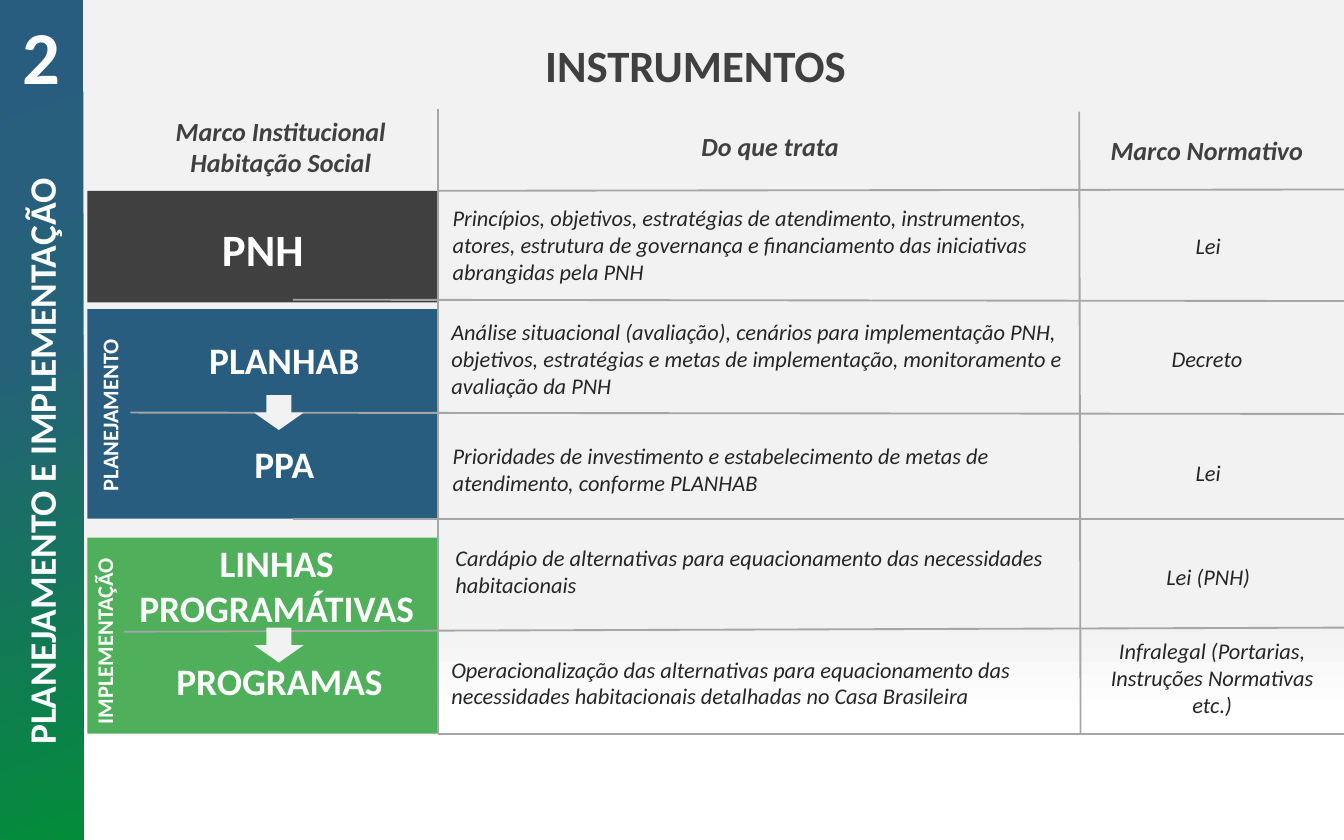
from dataclasses import dataclass

from lxml.etree import SubElement
from pptx import Presentation
from pptx.dml.color import RGBColor
from pptx.enum.shapes import MSO_CONNECTOR as Connector, MSO_SHAPE as Shape
from pptx.enum.text import MSO_ANCHOR as Anchor, MSO_AUTO_SIZE as AutoSize, PP_ALIGN as Align
from pptx.oxml.ns import qn
from pptx.util import Inches, Pt


@dataclass(frozen=True)
class Theme:
    """Colours, gradients and text formats of the slide."""
    font: str = "Calibri"
    white: str = "FFFFFF"
    pale: str = "F2F2F2"
    dark: str = "404040"
    ink: str = "262626"
    rule: str = "A6A6A6"
    blue: str = "285D7F"
    green: str = "4FAF5A"
    page: tuple = ((0, "F2F2F2"), (74, "F2F2F2"), (85, "FFFFFF"), (100, "FFFFFF"))
    band: tuple = ((0, "285D7F"), (42, "256179"), (100, "038C3A"))

    def text_style(self, role):
        """Return the font values and colour for a text role."""
        size, color, bold, italic = {
            "number": (40, self.white, True, False),
            "title": (24, self.dark, True, False),
            "policy": (24, self.white, True, False),
            "stage": (20, self.white, True, False),
            "phase": (12, self.white, True, False),
            "header": (14, self.dark, True, True),
            "detail": (12, self.ink, False, True),
        }[role]
        return {"name": self.font, "size": Pt(size), "bold": bold, "italic": italic}, color


class SlideBuilder:
    """Draws styled elements on the current slide."""

    def __init__(self, slide, theme):
        self.slide = slide
        self.theme = theme

    def gradient(self, fill, element, stops, angle):
        """Give a fill a linear gradient with any number of stops."""
        fill.gradient()
        fill.gradient_angle = 360 - angle
        stop_list = next(element.iter(qn("a:gsLst")))
        for old_stop in list(stop_list):
            stop_list.remove(old_stop)
        for position, color in stops:
            stop = SubElement(stop_list, qn("a:gs"), pos=str(position * 1000))
            SubElement(stop, qn("a:srgbClr"), val=color)

    def background(self):
        """Fill the slide background."""
        self.gradient(self.slide.background.fill, self.slide.element, self.theme.page, 90)

    def block(self, area, color, kind=Shape.RECTANGLE):
        """Add a borderless shape in one colour."""
        block = self.slide.shapes.add_shape(kind, *map(Inches, area))
        block.shadow.inherit = False
        block.line.fill.background()
        block.fill.solid()
        block.fill.fore_color.rgb = RGBColor.from_string(color)
        return block

    def side_band(self, area):
        """Add the gradient band behind everything else."""
        band = self.block(area, self.theme.blue)
        self.gradient(band.fill, band.element, self.theme.band, 70)
        band.element.getparent().insert(2, band.element)

    def rule(self, start, end):
        """Add a thin grey line."""
        rule = self.slide.shapes.add_connector(
            Connector.STRAIGHT, *map(Inches, (*start, *end)))
        rule.line.color.rgb = RGBColor.from_string(self.theme.rule)
        rule.line.width = Pt(1)
        SubElement(rule.element.spPr, qn("a:effectLst"))

    def add_text(self, frame, text, role, align):
        """Put formatted paragraphs into a text frame."""
        values, color = self.theme.text_style(role)
        frame.word_wrap = True
        for index, line in enumerate(text.split("\n")):
            paragraph = frame.add_paragraph() if index else frame.paragraphs[0]
            paragraph.alignment = align
            run = paragraph.add_run()
            run.text = line
            for name, value in values.items():
                setattr(run.font, name, value)
            run.font.color.rgb = RGBColor.from_string(color)

    def label(self, area, text, role, align=Align.CENTER, rotation=0):
        """Add a text box."""
        label = self.slide.shapes.add_textbox(*map(Inches, area))
        label.rotation = rotation
        self.add_text(label.text_frame, text, role, align)
        label.text_frame.auto_size = AutoSize.SHAPE_TO_FIT_TEXT

    def placeholder(self, index, area, text, role, rotation=0):
        """Move and fill a template placeholder."""
        holder = self.slide.placeholders[index]
        for name, value in zip(("left", "top", "width", "height"), area):
            setattr(holder, name, Inches(value))
        holder.rotation = rotation
        frame = holder.text_frame
        frame.auto_size = AutoSize.NONE
        frame.vertical_anchor = Anchor.MIDDLE
        properties = frame.paragraphs[0]._p.get_or_add_pPr()
        properties.set("marL", "0")
        properties.set("indent", "0")
        SubElement(properties, qn("a:buNone"))
        frame.paragraphs[0].space_before = Pt(0)
        self.add_text(frame, text, role, Align.CENTER)


def main():
    """Build the slide and save it."""
    deck = Presentation()
    deck.slide_width, deck.slide_height = Inches(10), Inches(6.25)
    theme = Theme()
    builder = SlideBuilder(deck.slides.add_slide(deck.slide_layouts[3]), theme)

    builder.background()
    builder.side_band((0, 0, 0.62, 6.25))
    builder.placeholder(0, (1.53, 0.23, 7.29, 0.5), "INSTRUMENTOS", "title")
    builder.placeholder(1, (-2.34, 3.22, 5.29, 0.43),
                        "PLANEJAMENTO E IMPLEMENTAÇÃO", "stage", 270)
    builder.placeholder(2, (0, 0, 0.62, 0.82), "2", "number")

    groups = ((1.42, 0.83, theme.dark), (2.3, 1.56, theme.blue), (4, 1.46, theme.green))
    for top, height, color in groups:
        builder.block((0.65, top, 2.61, height), color)

    phases = (((0.05, 2.94, 1.53, 0.3), "PLANEJAMENTO"),
              ((0, 4.62, 1.55, 0.3), "IMPLEMENTAÇÃO"))
    for area, phase in phases:
        builder.label(area, phase, "phase", rotation=270)

    right = 10
    row_rules = ((3.26, 1.42, 1.41), (2.18, 2.23, 2.24), (0.97, 3.07, 3.08),
                 (2.18, 3.86, 3.86), (0.92, 4.7, 4.67), (3.26, 5.46, 5.46))
    for left, start_y, end_y in row_rules:
        builder.rule((left, start_y), (right, end_y))
    for top, start_x, end_x in ((0.81, 3.26, 3.26), (0.83, 8.03, 8.04)):
        builder.rule((start_x, top), (end_x, 5.46))

    headers = (((0.65, 0.81, 2.88, 0.57), "Marco Institucional\nHabitação Social"),
               ((4.52, 0.92, 2.42, 0.34), "Do que trata"),
               ((7.77, 0.95, 2.42, 0.34), "Marco Normativo"))
    for area, header in headers:
        builder.label(area, header, "header")

    instruments = (
        ((0.65, 1.6, 2.61, 0.5), "PNH", "policy",
         (3.27, 1.47, 4.77, 0.71),
         "Princípios, objetivos, estratégias de atendimento, instrumentos, atores, "
         "estrutura de governança e financiamento das iniciativas abrangidas pela PNH",
         (8.25, 1.68, 1.48, 0.3), "Lei"),
        ((0.97, 2.46, 2.29, 0.44), "PLANHAB", "stage",
         (3.26, 2.32, 4.78, 0.71),
         "Análise situacional (avaliação), cenários para implementação PNH, objetivos, "
         "estratégias e metas de implementação, monitoramento e avaliação da PNH",
         (8.24, 2.52, 1.48, 0.3), "Decreto"),
        ((0.97, 3.23, 2.29, 0.44), "PPA", "stage",
         (3.27, 3.24, 4.77, 0.5),
         "Prioridades de investimento e estabelecimento de metas de atendimento, "
         "conforme PLANHAB",
         (8.25, 3.37, 1.48, 0.3), "Lei"),
        ((0.88, 3.97, 2.36, 0.77), "LINHAS PROGRAMÁTIVAS", "stage",
         (3.29, 4, 4.7, 0.5),
         "Cardápio de alternativas para equacionamento das necessidades habitacionais",
         (8.25, 4.14, 1.48, 0.3), "Lei (PNH)"),
        ((0.9, 4.85, 2.36, 0.44), "PROGRAMAS", "stage",
         (3.26, 4.83, 4.78, 0.5),
         "Operacionalização das alternativas para equacionamento das necessidades "
         "habitacionais detalhadas no Casa Brasileira",
         (8.1, 4.69, 1.84, 0.71), "Infralegal (Portarias, Instruções Normativas etc.)"),
    )
    for name_area, name, role, subject_area, subject, norm_area, norm in instruments:
        builder.label(name_area, name, role)
        builder.label(subject_area, subject, "detail", Align.LEFT)
        builder.label(norm_area, norm, "detail")

    for arrow_top in (2.94, 4.67):
        builder.block((1.89, arrow_top, 0.37, 0.26), theme.pale, Shape.DOWN_ARROW)

    deck.save("out.pptx")


if __name__ == "__main__":
    main()
